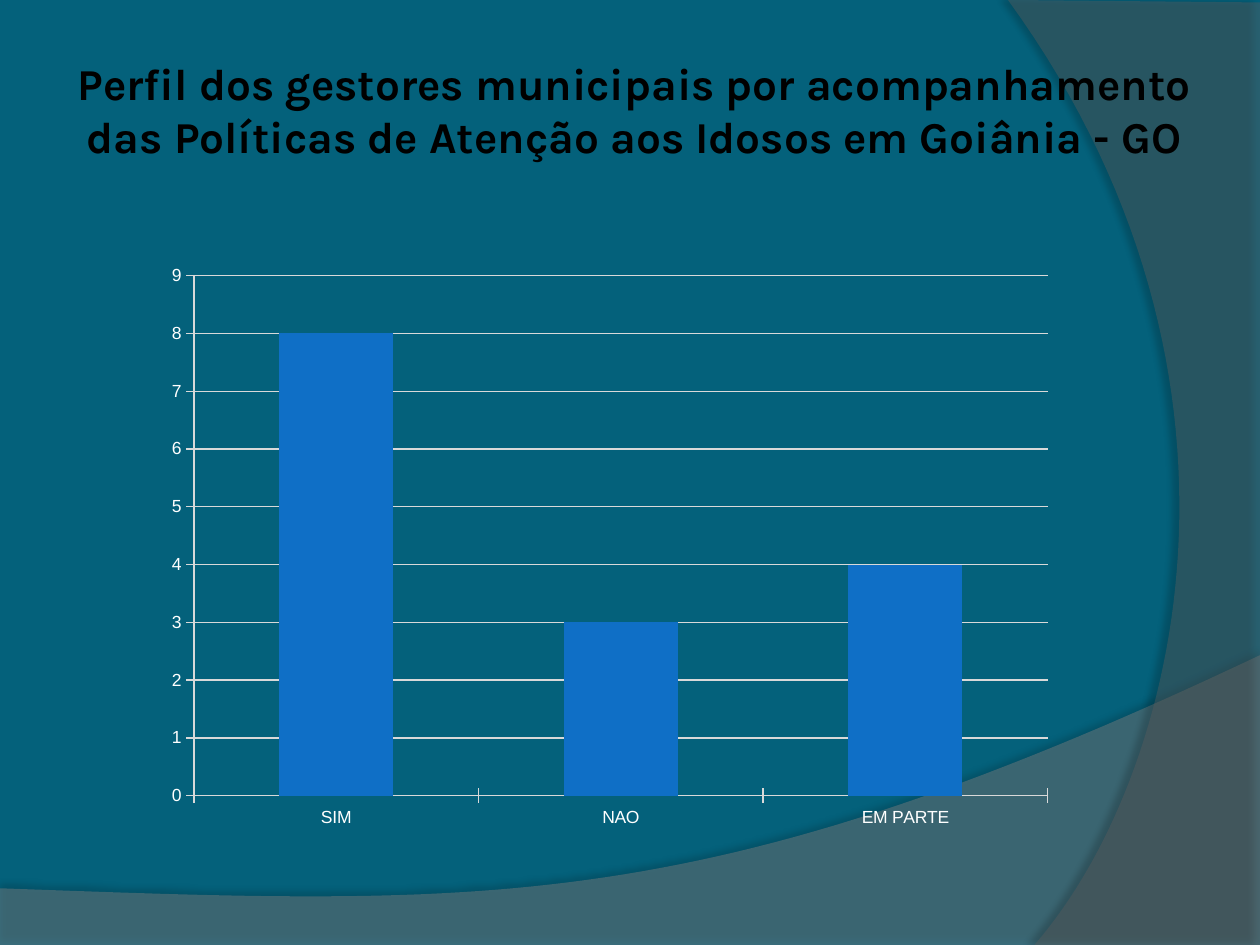
from lxml import etree
from pptx import Presentation
from pptx.chart.data import CategoryChartData
from pptx.dml.color import RGBColor
from pptx.enum.chart import XL_CHART_TYPE, XL_TICK_MARK
from pptx.enum.text import MSO_ANCHOR, PP_ALIGN
from pptx.oxml import parse_xml
from pptx.oxml.ns import nsdecls, qn
from pptx.util import Inches, Pt

COLUMNS = XL_CHART_TYPE.COLUMN_CLUSTERED
CROSS = XL_TICK_MARK.CROSS
MIDDLE = MSO_ANCHOR.MIDDLE
CENTER = PP_ALIGN.CENTER

TEAL = RGBColor(0x04, 0x61, 0x7B)
LIGHT_GRAY = RGBColor(0x7F, 0x7F, 0x7F)
DARK_GRAY = RGBColor(0x5E, 0x5E, 0x5E)
BLUE = RGBColor(0x0F, 0x6F, 0xC6)
AXIS_GRAY = RGBColor(0xD9, 0xD9, 0xD9)
BLACK = RGBColor(0, 0, 0)
WHITE = RGBColor(0xFF, 0xFF, 0xFF)


def curve_points(start, control_1, control_2, end, steps=60):
    """Points along a cubic curve, without its start."""
    points = []
    for step in range(1, steps + 1):
        t = step / steps
        weights = ((1 - t) ** 3, 3 * t * (1 - t) ** 2, 3 * t ** 2 * (1 - t), t ** 3)
        corners = (start, control_1, control_2, end)
        points.append(tuple(sum(w * c[axis] for w, c in zip(weights, corners))
                            for axis in (0, 1)))
    return points


deck = Presentation()
deck.slide_width = Inches(10)
deck.slide_height = Inches(7.5)
slide = deck.slides.add_slide(deck.slide_layouts[5])
slide.background.fill.solid()
slide.background.fill.fore_color.rgb = TEAL

# Translucent waves: straight corners, curve, colour, opacity and shadow
waves = [
    ([(0, 7.05), (0, 7.51), (10, 7.51), (10, 5.2)],
     [(5.59, 7.29), (3.91, 7.19), (0, 7.05)], LIGHT_GRAY, 45, 35, 3.5, 270),
    ([(10, 0.02), (10, 7.5), (8.21, 7.5)],
     [(9.35, 6.19), (10.18, 3), (8, 0)], DARK_GRAY, 40, 45, 4, 180),
]
for corners, curve, color, opacity, shade, distance, angle in waves:
    outline = [(Inches(x), Inches(y))
               for x, y in corners + curve_points(corners[-1], *curve)]
    builder = slide.shapes.build_freeform(*outline[0])
    builder.add_line_segments(outline[1:], close=True)
    wave = builder.convert_to_shape()
    wave.fill.solid()
    wave.fill.fore_color.rgb = color
    wave.line.fill.background()
    tint = wave.element.spPr.find(".//" + qn("a:srgbClr"))
    etree.SubElement(tint, qn("a:alpha"), val=str(opacity * 1000))
    wave.element.spPr.append(parse_xml(
        f'<a:effectLst {nsdecls("a")}><a:outerShdw blurRad="{Pt(4)}" '
        f'dist="{Pt(distance)}" dir="{angle * 60000}" algn="ctr" rotWithShape="0">'
        f'<a:srgbClr val="000000"><a:alpha val="{shade * 1000}"/></a:srgbClr>'
        '</a:outerShdw></a:effectLst>'))

# Title, brought in front of the waves
title = slide.shapes.title
title.element.getparent().append(title.element)
title.left, title.top = Inches(0.43), Inches(0.36)
title.width, title.height = Inches(9.21), Inches(1.42)
frame = title.text_frame
frame.word_wrap = True
frame.vertical_anchor = MIDDLE
frame.margin_left = frame.margin_right = frame.margin_top = Inches(0.05)
frame.margin_bottom = Inches(0.46)
para = frame.paragraphs[0]
para.alignment = CENTER
span = para.add_run()
span.text = ("Perfil dos gestores municipais por acompanhamento "
             "das Políticas de Atenção aos Idosos em Goiânia - GO")
span.font.name = "Karla"
span.font.size = Pt(25.2)
span.font.bold = True
span.font.color.rgb = BLACK

# Column chart
data = CategoryChartData()
data.categories = ["SIM", "NAO", "EM PARTE"]
data.add_series("Series 1", (8, 3, 4))
chart = slide.shapes.add_chart(COLUMNS, Inches(1.22), Inches(2.02),
                               Inches(7.24), Inches(4.65), data).chart
chart.has_legend = False
chart.has_title = False
chart.font.name = "Arial"
chart.font.size = Pt(10)
chart.font.color.rgb = WHITE
plot = chart.plots[0]
plot.gap_width = 150
plot.vary_by_categories = False
columns = plot.series[0]
columns.format.fill.solid()
columns.format.fill.fore_color.rgb = BLUE

# Axes and gridlines
value_axis = chart.value_axis
value_axis.minimum_scale, value_axis.maximum_scale = 0, 9
value_axis.major_unit = 1
value_axis.has_major_gridlines = True
for axis in (chart.category_axis, value_axis):
    axis.major_tick_mark = CROSS
for line in (chart.category_axis.format.line, value_axis.format.line,
             value_axis.major_gridlines.format.line):
    line.color.rgb = AXIS_GRAY
    line.width = Pt(0.75)

# Inner plot area as shares of the chart
plot_area = chart.element.find(".//" + qn("c:plotArea"))
for old_layout in plot_area.findall(qn("c:layout")):
    plot_area.remove(old_layout)
layout = etree.Element(qn("c:layout"))
manual = etree.SubElement(layout, qn("c:manualLayout"))
for tag, value in (("layoutTarget", "inner"), ("xMode", "edge"), ("yMode", "edge"),
                   ("x", "0.044"), ("y", "0.036"), ("w", "0.936"), ("h", "0.888")):
    etree.SubElement(manual, qn("c:" + tag), val=value)
plot_area.insert(0, layout)

deck.save("out.pptx")
